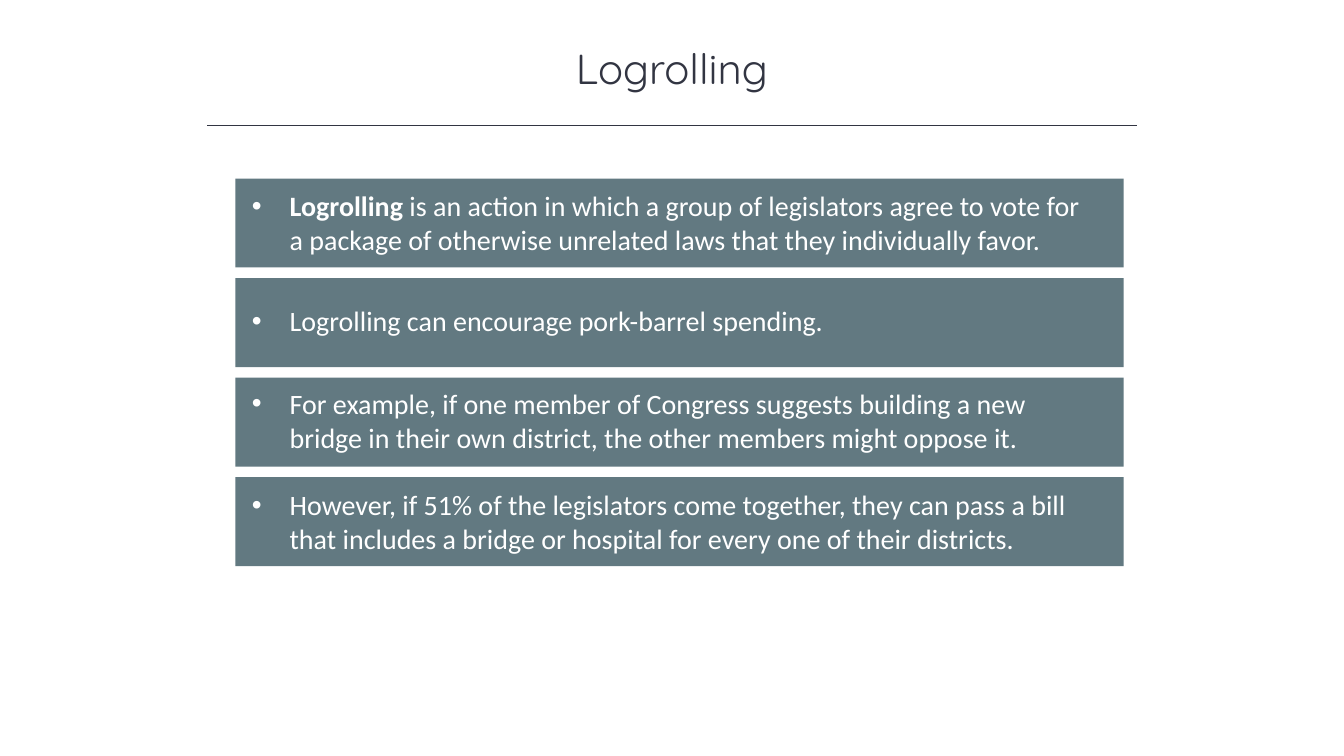
from pptx import Presentation
from pptx.dml.color import RGBColor
from pptx.enum.shapes import MSO_CONNECTOR as LINE, MSO_SHAPE as SHAPE
from pptx.enum.text import MSO_ANCHOR as ANCHOR, PP_ALIGN as ALIGN
from pptx.oxml.ns import qn
from pptx.util import Pt
from lxml.etree import SubElement

DARK, SLATE, WHITE = "323542", "627981", "FFFFFF"


def color(code):
    return RGBColor.from_string(code)


def write(shape, text, bold="", font="Calibri", size=20, ink=WHITE,
          align=ALIGN.LEFT, bullet=False):
    frame = shape.text_frame
    frame.word_wrap = True
    frame.vertical_anchor = ANCHOR.MIDDLE
    para = frame.paragraphs[0]
    para.alignment = align
    if bullet:
        props = para._p.get_or_add_pPr()
        props.set("marL", str(Pt(27)))
        props.set("indent", str(Pt(-27)))
        SubElement(props, qn("a:buFont")).set("typeface", "Arial")
        SubElement(props, qn("a:buChar")).set("char", "•")
    for part, heavy in ((bold, True), (text, False)):
        if part:
            run = para.add_run()
            run.text = part
            run.font.name = font
            run.font.size = Pt(size)
            run.font.bold = heavy
            run.font.color.rgb = color(ink)


deck = Presentation()
deck.slide_width, deck.slide_height = Pt(960), Pt(540)
slide = deck.slides.add_slide(deck.slide_layouts[6])

# Title
title = slide.shapes.add_textbox(Pt(120), Pt(26.6), Pt(720), Pt(44))
write(title, "Logrolling", font="Quicksand", size=30, ink=DARK,
      align=ALIGN.CENTER)

# Rule under the title
rule = slide.shapes.add_connector(LINE.STRAIGHT, Pt(148), Pt(89.5),
                                  Pt(812), Pt(89.5))
rule.line.color.rgb = color(DARK)
rule.line.width = Pt(1)
SubElement(rule._element.spPr, qn("a:effectLst"))

# Bars: bold lead, text, top and height of the label
points = [
    ("Logrolling", " is an action in which a group of legislators agree to "
     "vote for a package of otherwise unrelated laws that they individually "
     "favor.", 131, 55.7),
    ("", "Logrolling can encourage pork-barrel spending.", 213.1, 31.5),
    ("", "For example, if one member of Congress suggests building a new "
     "bridge in their own district, the other members might oppose it.",
     272.2, 55.7),
    ("", "However, if 51% of the legislators come together, they can pass a "
     "bill that includes a bridge or hospital for every one of their "
     "districts.", 344.6, 55.7),
]
for row, (lead, text, top, high) in enumerate(points):
    group = slide.shapes.add_group_shape()
    boxes = [(168.2, 127.6 + 71.1 * row, 634.4, 63.5),
             (172.8, top, 614.9, high)]
    for box in boxes:
        bar = group.shapes.add_shape(SHAPE.RECTANGLE, *map(Pt, box))
        bar.shadow.inherit = False
        bar.fill.solid()
        bar.fill.fore_color.rgb = color(SLATE)
        bar.line.fill.background()
    write(bar, text, bold=lead, bullet=True)

deck.save("out.pptx")
